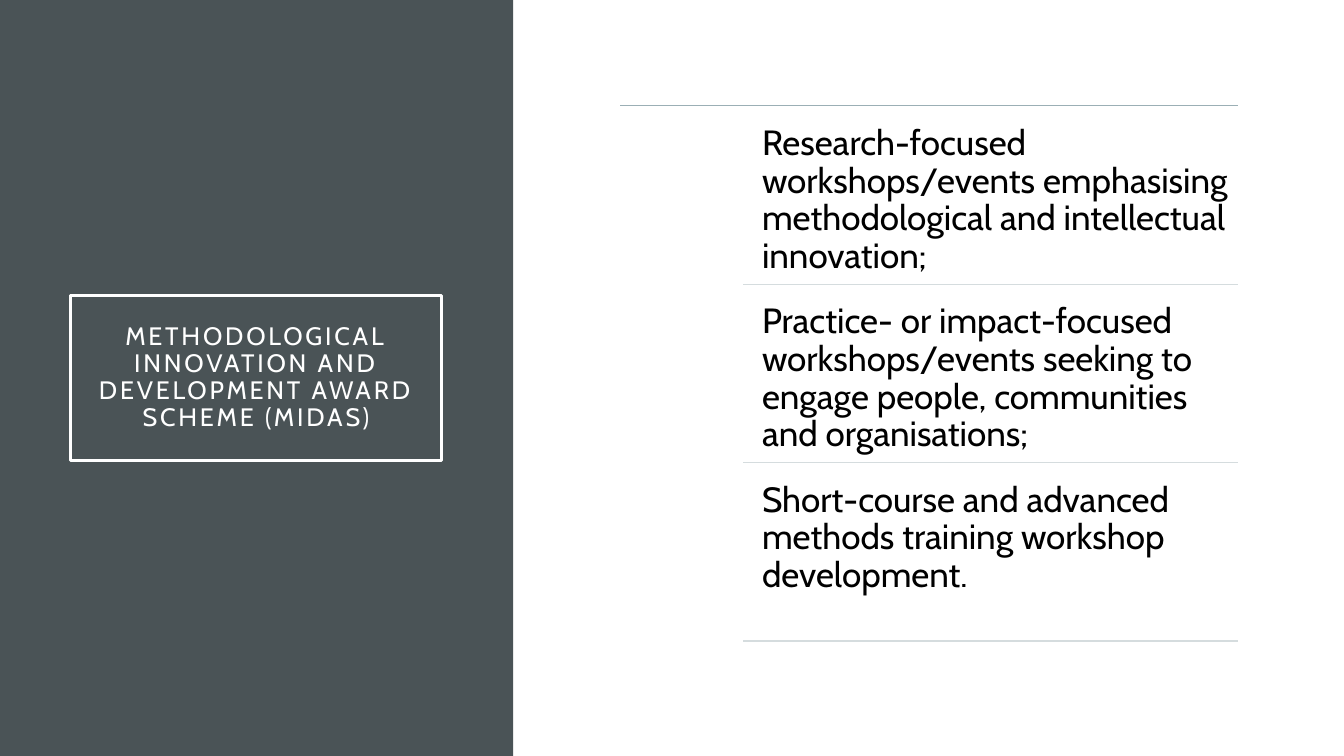
from dataclasses import dataclass

from lxml.etree import SubElement
from pptx import Presentation
from pptx.dml.color import RGBColor
from pptx.enum.shapes import MSO_CONNECTOR, MSO_SHAPE
from pptx.enum.text import MSO_ANCHOR, PP_ALIGN
from pptx.oxml.ns import qn
from pptx.slide import Slide
from pptx.text.text import TextFrame
from pptx.util import Inches, Pt

FONT = "Cabin"
SLATE, WHITE, BLACK = "4A5356", "FFFFFF", "000000"
TOP_RULE, ROW_RULE = "9BAFB5", "D5DCDE"

# Grid of the list, in inches
LIST_TOP = 1.05
ROW_HEIGHT = 1.77
LIST_LEFT, RULE_LEFT, TEXT_LEFT, LIST_RIGHT = 6.15, 7.37, 7.46, 12.28
TEXT_GAP = 0.09


@dataclass
class Box:
    left: float
    top: float
    width: float
    height: float

    def lengths(self) -> list[int]:
        return [Inches(n) for n in (self.left, self.top, self.width, self.height)]


@dataclass
class TextStyle:
    size: float
    color: str
    inset: float
    align: PP_ALIGN = PP_ALIGN.LEFT
    anchor: MSO_ANCHOR = MSO_ANCHOR.TOP
    space_after: float = 0
    letter_spacing: float = 0


@dataclass
class Rule:
    left: float
    top: float
    color: str
    weight: float


PANEL = Box(0, 0, 5.09, 7.5)
TITLE_BOX = Box(0.7, 2.93, 3.68, 1.64)
TITLE = "METHODOLOGICAL INNOVATION AND DEVELOPMENT AWARD SCHEME (MIDAS)"
TITLE_STYLE = TextStyle(18, WHITE, 0.2, PP_ALIGN.CENTER, MSO_ANCHOR.MIDDLE, letter_spacing=2)
ITEM_STYLE = TextStyle(25, BLACK, 0.1, space_after=8.75)
ITEMS = [
    "Research-focused workshops/events emphasising methodological and intellectual innovation;",
    "Practice- or impact-focused workshops/events seeking to engage people, communities and organisations;",
    "Short-course and advanced methods training workshop development.",
]


def color(value: str) -> RGBColor:
    return RGBColor.from_string(value)


def write_text(frame: TextFrame, text: str, style: TextStyle) -> None:
    frame.word_wrap = True
    frame.vertical_anchor = style.anchor
    frame.margin_left = frame.margin_right = Inches(style.inset)
    frame.margin_top = frame.margin_bottom = Inches(style.inset)
    paragraph = frame.paragraphs[0]
    run = paragraph.add_run()
    run.text = text
    paragraph.alignment = style.align
    paragraph.line_spacing = 0.9
    paragraph.space_after = Pt(style.space_after)
    paragraph.font.name = FONT
    paragraph.font.size = Pt(style.size)
    paragraph.font.color.rgb = color(style.color)
    if style.letter_spacing:
        run._r.get_or_add_rPr().set("spc", str(round(style.letter_spacing * 100)))


def draw_panel(slide: Slide) -> None:
    shape = slide.shapes.add_shape(MSO_SHAPE.RECTANGLE, *PANEL.lengths())
    shape.shadow.inherit = False
    shape.fill.solid()
    shape.fill.fore_color.rgb = color(SLATE)
    shape.line.fill.background()


def draw_title(slide: Slide) -> None:
    shape = slide.shapes.add_shape(MSO_SHAPE.RECTANGLE, *TITLE_BOX.lengths())
    shape.shadow.inherit = False
    shape.fill.background()
    shape.line.color.rgb = color(WHITE)
    shape.line.width = Pt(2.5)
    write_text(shape.text_frame, TITLE, TITLE_STYLE)


def draw_rule(slide: Slide, rule: Rule) -> None:
    connector = slide.shapes.add_connector(
        MSO_CONNECTOR.STRAIGHT,
        Inches(rule.left), Inches(rule.top), Inches(LIST_RIGHT), Inches(rule.top),
    )
    connector.line.color.rgb = color(rule.color)
    connector.line.width = Pt(rule.weight)
    SubElement(connector._element.spPr, qn("a:effectLst"))


def draw_item(slide: Slide, row: int, text: str) -> None:
    top = LIST_TOP + row * ROW_HEIGHT
    box = Box(TEXT_LEFT, top + TEXT_GAP, LIST_RIGHT - TEXT_LEFT, ROW_HEIGHT - TEXT_GAP)
    text_box = slide.shapes.add_textbox(*box.lengths())
    write_text(text_box.text_frame, text, ITEM_STYLE)
    draw_rule(slide, Rule(RULE_LEFT, top + ROW_HEIGHT, ROW_RULE, 1))


def main() -> None:
    presentation = Presentation()
    presentation.slide_width = Inches(13.33)
    presentation.slide_height = Inches(7.5)
    slide = presentation.slides.add_slide(presentation.slide_layouts[6])

    # Left panel with the framed title
    draw_panel(slide)
    draw_title(slide)

    # Ruled list
    draw_rule(slide, Rule(LIST_LEFT, LIST_TOP, TOP_RULE, 0.5))
    for row, text in enumerate(ITEMS):
        draw_item(slide, row, text)

    presentation.save("out.pptx")


if __name__ == "__main__":
    main()
